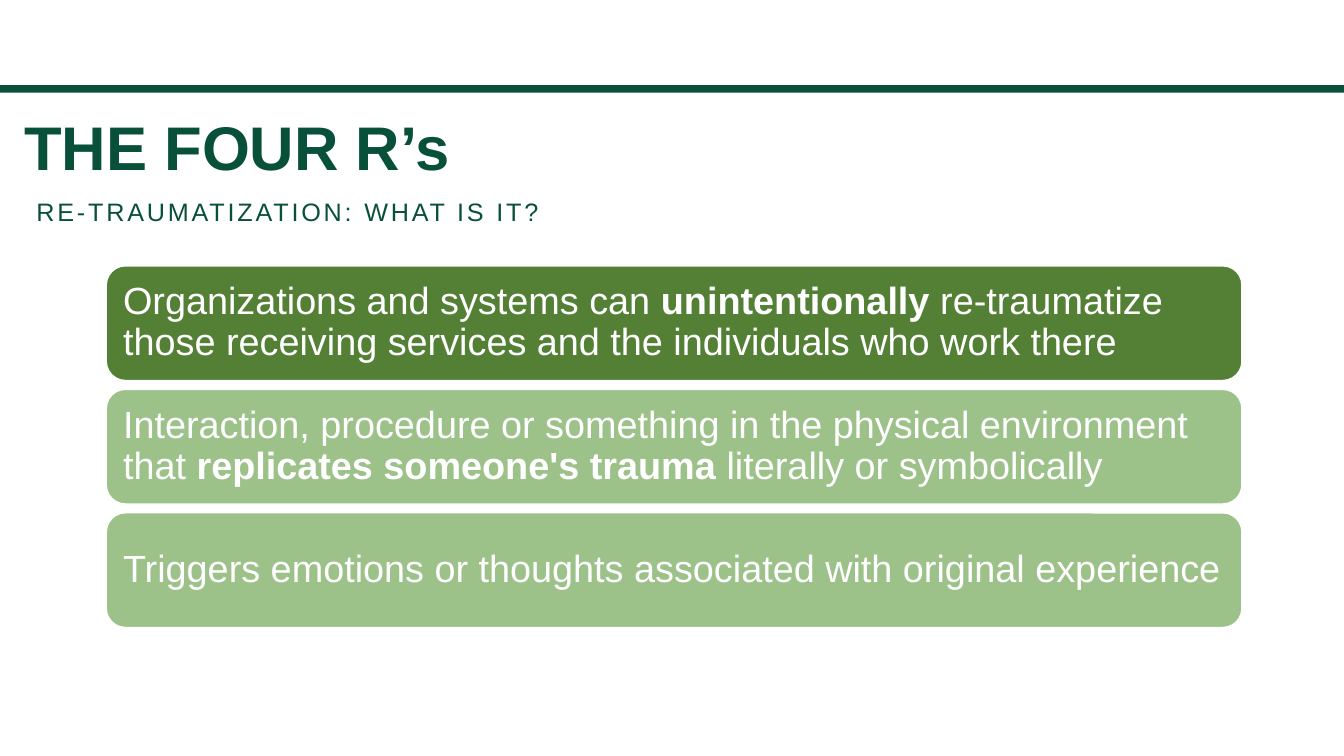
from dataclasses import dataclass

from pptx import Presentation
from pptx.dml.color import RGBColor
from pptx.enum.shapes import MSO_SHAPE
from pptx.enum.text import MSO_ANCHOR, PP_ALIGN
from pptx.util import Pt

RECTANGLE = MSO_SHAPE.RECTANGLE
ROUNDED = MSO_SHAPE.ROUNDED_RECTANGLE
TOP, MIDDLE, BOTTOM = MSO_ANCHOR.TOP, MSO_ANCHOR.MIDDLE, MSO_ANCHOR.BOTTOM
LEFT = PP_ALIGN.LEFT


@dataclass(frozen=True)
class Theme:
    font: str = "Arial"
    pine: str = "09503A"
    moss: str = "538035"
    sage: str = "9CC189"
    white: str = "FFFFFF"
    title_size: float = 44
    subtitle_size: float = 18
    card_size: float = 27
    line_spacing: float = 0.9


def write(frame, spans, *, theme, size, color, anchor=TOP, insets=(3, 1.5), tracking=0):
    """Fill a frame with one paragraph of (text, bold) spans; tracking is in points."""
    frame.word_wrap = True
    frame.vertical_anchor = anchor
    frame.margin_left = frame.margin_right = Pt(insets[0])
    frame.margin_top = frame.margin_bottom = Pt(insets[1])
    para = frame.paragraphs[0]
    para.alignment = LEFT
    para.line_spacing = theme.line_spacing
    for text, bold in spans:
        span = para.add_run()
        span.text = text
        span.font.name = theme.font
        span.font.size = Pt(size)
        span.font.bold = bold
        span.font.color.rgb = RGBColor.from_string(color)
        if tracking:
            span.font._element.set("spc", str(tracking * 100))


class Page:
    def __init__(self, deck, theme):
        self.theme = theme
        self.slide = deck.slides.add_slide(deck.slide_layouts[6])

    def shape(self, kind, left, top, width, height, fill, outline=None):
        shape = self.slide.shapes.add_shape(kind, Pt(left), Pt(top), Pt(width), Pt(height))
        shape.shadow.inherit = False
        shape.fill.solid()
        shape.fill.fore_color.rgb = RGBColor.from_string(fill)
        if outline:
            shape.line.color.rgb = RGBColor.from_string(outline)
            shape.line.width = Pt(1)
        else:
            shape.line.fill.background()
        return shape

    def text(self, left, top, width, height, spans, **style):
        box = self.slide.shapes.add_textbox(Pt(left), Pt(top), Pt(width), Pt(height))
        write(box.text_frame, spans, theme=self.theme, **style)

    def card(self, left, top, width, height, fill, spans):
        card = self.shape(ROUNDED, left, top, width, height, fill, self.theme.white)
        write(card.text_frame, spans, theme=self.theme, size=self.theme.card_size,
              color=self.theme.white, anchor=MIDDLE, insets=(8, 8))


def main():
    theme = Theme()
    deck = Presentation()
    deck.slide_width, deck.slide_height = Pt(960), Pt(540)
    page = Page(deck, theme)

    page.shape(RECTANGLE, 0, 60.9, 960, 5.3, theme.pine)
    page.text(14.4, 82, 864, 50, [("THE FOUR R’s", True)],
              size=theme.title_size, color=theme.pine)
    page.text(23, 138.2, 864, 25.2, [("RE-TRAUMATIZATION: WHAT IS IT?", False)],
              size=theme.subtitle_size, color=theme.pine, anchor=BOTTOM, tracking=2)

    cards = [
        (theme.moss, [
            ("Organizations and systems can ", False),
            ("unintentionally", True),
            (" re-traumatize those receiving services and the individuals who work there",
             False)]),
        (theme.sage, [
            ("Interaction, procedure or something in the physical environment that ", False),
            ("replicates someone's trauma ", True),
            ("literally or symbolically", False)]),
        (theme.sage, [
            ("Triggers emotions or thoughts associated with original experience", False)]),
    ]
    first_top, pitch = 189.9, 88.2
    for index, (fill, spans) in enumerate(cards):
        page.card(75.9, first_top + index * pitch, 811.2, 81.9, fill, spans)

    deck.save("out.pptx")


if __name__ == "__main__":
    main()
